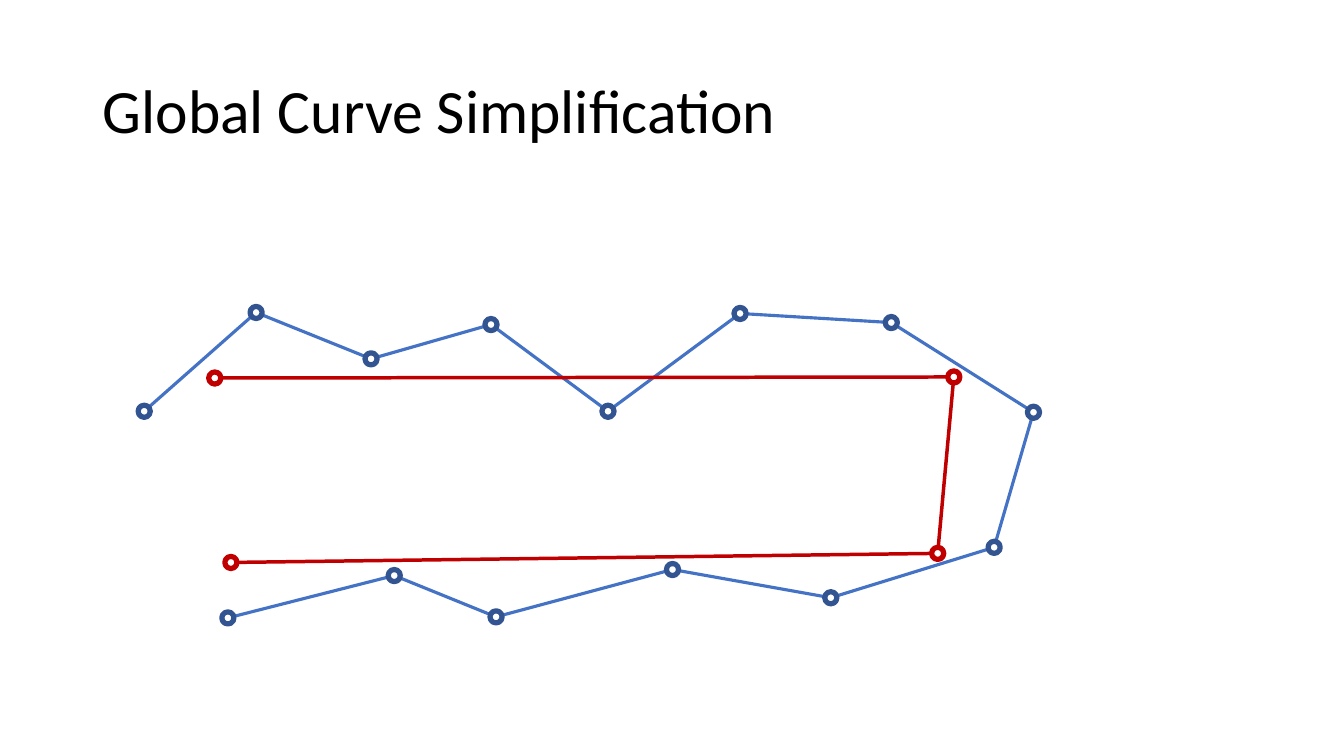
from itertools import pairwise

from lxml.etree import SubElement
from pptx import Presentation
from pptx.dml.color import RGBColor as Rgb
from pptx.enum.shapes import MSO_CONNECTOR as Link, MSO_SHAPE as Shape
from pptx.enum.text import MSO_ANCHOR as Anchor
from pptx.oxml.ns import qn
from pptx.util import Inches, Pt

HUES = {"ink": "000000", "white": "FFFFFF", "blue": "4472C4",
        "navy": "325491", "red": "C00000"}
DOT = 0.12

# Vertices in inches from the top left of each curve's box
INPUT = [(0, 0.98), (1.11, 0), (2.25, 0.46), (3.44, 0.12), (4.6, 0.98),
         (5.91, 0.01), (7.41, 0.1), (8.82, 0.99), (8.43, 2.33),
         (6.81, 2.83), (5.24, 2.55), (3.49, 3.02), (2.48, 2.61), (0.83, 3.03)]
RESULT = [(0, 0.01), (7.33, 0), (7.17, 1.75), (0.16, 1.84)]


def hue(name):
    return Rgb.from_string(HUES[name])


def style(item, form):
    for name, value in form.items():
        setattr(item, name, value)


def stroke(line, color, width):
    line.color.rgb = hue(color)
    line.width = Pt(width)


def title(slide, box, text):
    area = slide.shapes.add_textbox(*map(Inches, box))
    frame = area.text_frame
    style(frame, {"word_wrap": True, "vertical_anchor": Anchor.MIDDLE})
    para = frame.paragraphs[0]
    style(para, {"text": text, "line_spacing": 0.9})
    style(para.font, {"name": "Calibri", "size": Pt(44)})
    para.font.color.rgb = hue("ink")


def curve(slide, box, points, edge, rim, width):
    """Draw a grouped polyline with a ring on every vertex."""
    left, top = box
    group = slide.shapes.add_group_shape().shapes
    spots = [(left + x, top + y) for x, y in points]
    for start, end in pairwise(spots):
        line = group.add_connector(Link.STRAIGHT, *map(Inches, start + end))
        stroke(line.line, edge, width)
        SubElement(line._element.spPr, qn("a:effectLst"))
    for x, y in spots:
        ring = group.add_shape(Shape.OVAL, Inches(x - DOT / 2),
                               Inches(y - DOT / 2), Inches(DOT), Inches(DOT))
        ring.shadow.inherit = False
        ring.fill.solid()
        ring.fill.fore_color.rgb = hue("white")
        stroke(ring.line, rim, 3.75)


def main():
    deck = Presentation()
    style(deck, {"slide_width": Inches(13.33), "slide_height": Inches(7.5)})
    slide = deck.slides.add_slide(deck.slide_layouts[6])
    title(slide, (0.92, 0.4, 11.5, 1.45), "Global Curve Simplification")
    curve(slide, (1.43, 3.1), INPUT, "blue", "navy", 2.25)
    curve(slide, (2.13, 3.74), RESULT, "red", "red", 2.5)
    deck.save("out.pptx")


if __name__ == "__main__":
    main()
